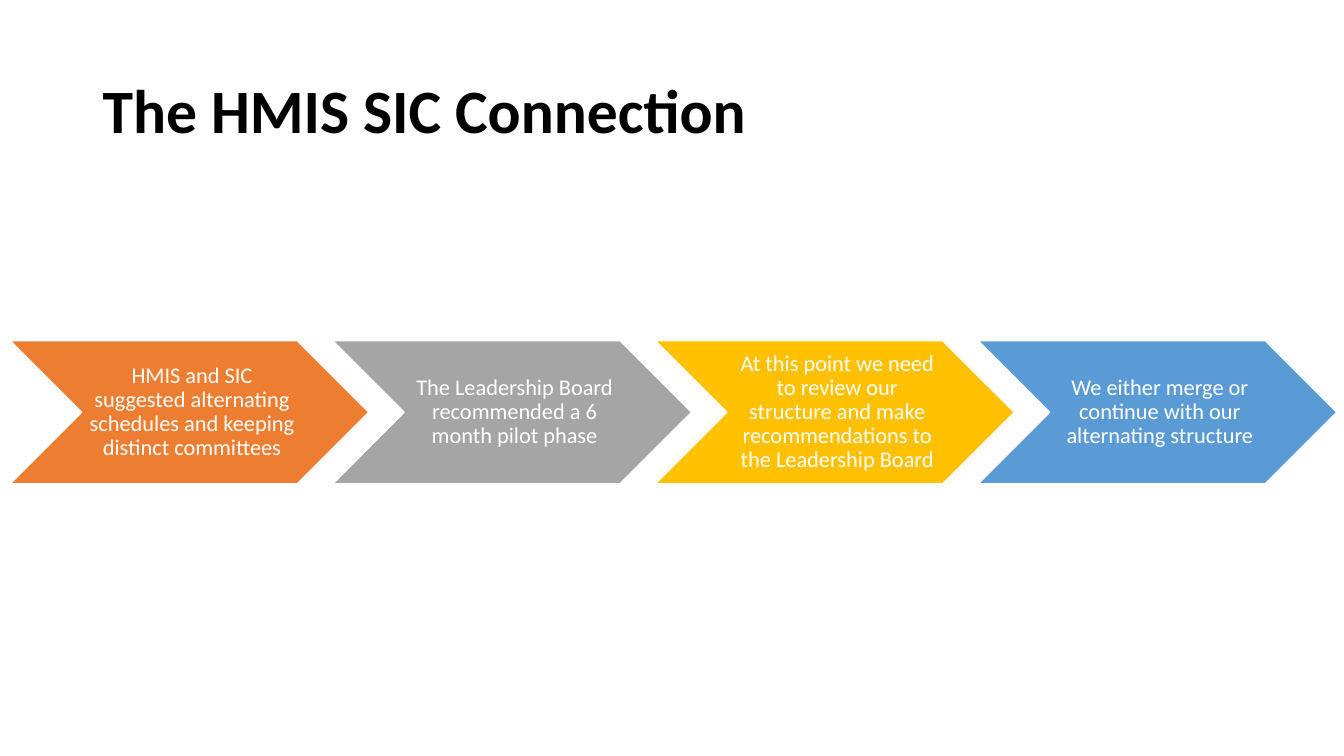
from dataclasses import dataclass

from pptx import Presentation
from pptx.dml.color import RGBColor
from pptx.enum.shapes import MSO_SHAPE
from pptx.enum.text import MSO_ANCHOR, PP_ALIGN
from pptx.shapes.autoshape import Shape
from pptx.slide import Slide
from pptx.util import Emu, Pt

CHEVRON = MSO_SHAPE.CHEVRON
MIDDLE = MSO_ANCHOR.MIDDLE
LEFT, CENTER = PP_ALIGN.LEFT, PP_ALIGN.CENTER

BLACK = RGBColor(0x00, 0x00, 0x00)
WHITE = RGBColor(0xFF, 0xFF, 0xFF)
ORANGE = RGBColor(0xED, 0x7D, 0x31)
GRAY = RGBColor(0xA5, 0xA5, 0xA5)
GOLD = RGBColor(0xFF, 0xC0, 0x00)
BLUE = RGBColor(0x5B, 0x9B, 0xD5)

FONT = "Calibri"
EMU_PER_PX = 9144  # 100 px to the inch
SLIDE_WIDTH, SLIDE_HEIGHT = 1333, 750
STEP_LEFT, STEP_TOP, STEP_PITCH = 10, 338, 320
STEP_WIDTH, STEP_HEIGHT = 356, 142


@dataclass(frozen=True)
class Step:
    text: str
    color: RGBColor


STEPS = [
    Step("HMIS and SIC suggested alternating schedules and keeping distinct committees", ORANGE),
    Step("The Leadership Board recommended a 6 month pilot phase", GRAY),
    Step("At this point we need to review our structure and make "
         "recommendations to the Leadership Board", GOLD),
    Step("We either merge or continue with our alternating structure", BLUE),
]


def px(length: int) -> Emu:
    return Emu(length * EMU_PER_PX)


def write_text(shape: Shape, text: str, *, size: int, color: RGBColor,
               bold: bool = False, align: PP_ALIGN = LEFT,
               insets: tuple[int, int, int, int] = (10, 5, 10, 5)) -> None:
    """Fill a shape with one formatted paragraph; insets run left, top, right, bottom."""
    frame = shape.text_frame
    frame.word_wrap = True
    frame.vertical_anchor = MIDDLE
    (frame.margin_left, frame.margin_top,
     frame.margin_right, frame.margin_bottom) = map(px, insets)
    paragraph = frame.paragraphs[0]
    paragraph.alignment = align
    paragraph.line_spacing = 0.9
    run = paragraph.add_run()
    run.text = text
    run.font.name = FONT
    run.font.size = Pt(size)
    run.font.bold = bold
    run.font.color.rgb = color


def add_title(slide: Slide, text: str) -> None:
    title = slide.shapes.add_textbox(px(92), px(40), px(1150), px(145))
    write_text(title, text, size=44, color=BLACK, bold=True)


def add_step(slide: Slide, index: int, step: Step) -> None:
    chevron = slide.shapes.add_shape(
        CHEVRON, px(STEP_LEFT + index * STEP_PITCH), px(STEP_TOP),
        px(STEP_WIDTH), px(STEP_HEIGHT))
    chevron.shadow.inherit = False
    chevron.fill.solid()
    chevron.fill.fore_color.rgb = step.color
    chevron.line.color.rgb = WHITE
    chevron.line.width = Pt(1)
    write_text(chevron, step.text, size=16, color=WHITE, align=CENTER,
               insets=(7, 2, 2, 2))


def main() -> None:
    presentation = Presentation()
    presentation.slide_width = px(SLIDE_WIDTH)
    presentation.slide_height = px(SLIDE_HEIGHT)
    slide = presentation.slides.add_slide(presentation.slide_layouts[6])

    # Title
    add_title(slide, "The HMIS SIC Connection")

    # Process chevrons
    for index, step in enumerate(STEPS):
        add_step(slide, index, step)

    presentation.save("out.pptx")


if __name__ == "__main__":
    main()
